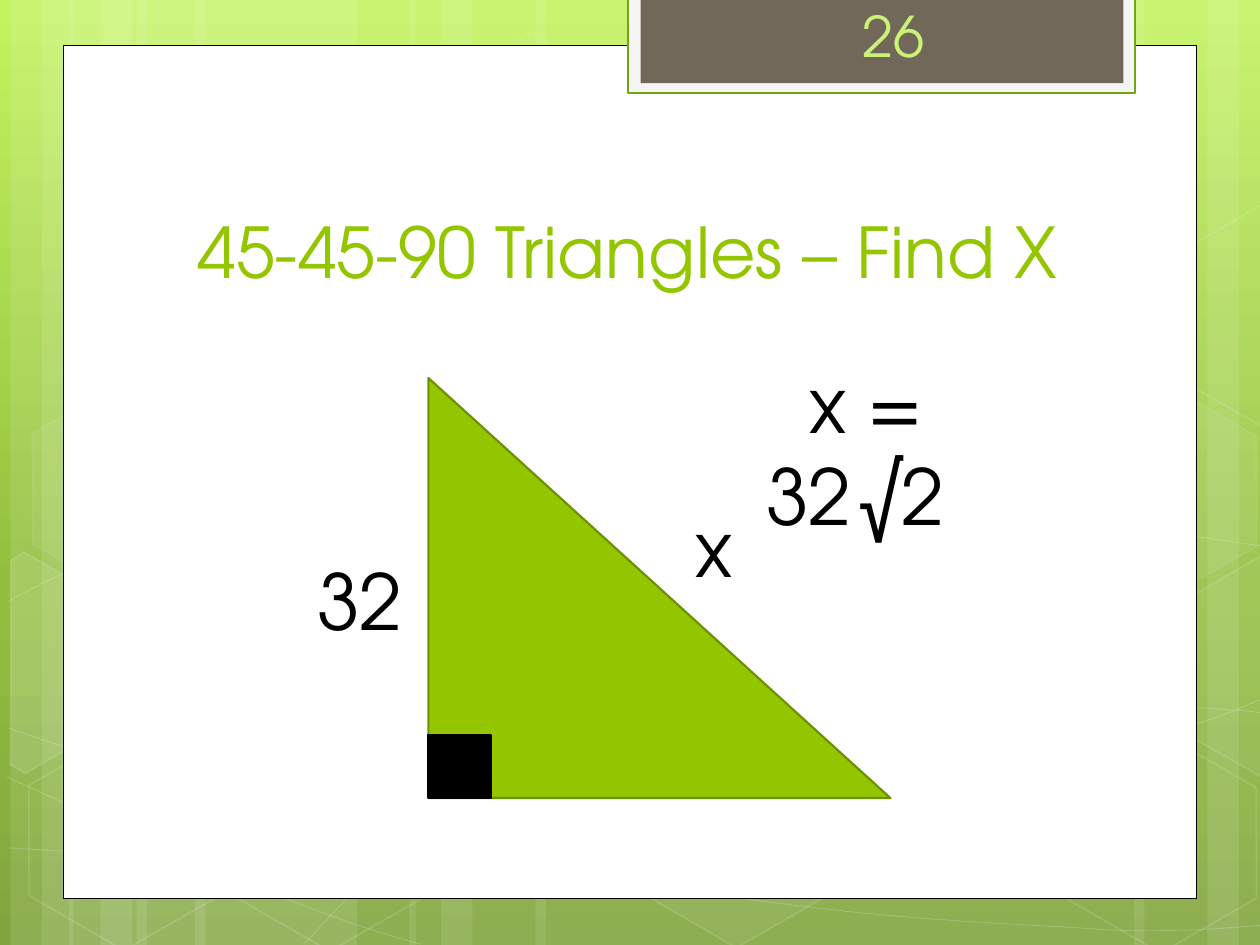
from copy import deepcopy
from dataclasses import dataclass
from math import cos, radians, sin

from lxml import etree
from pptx import Presentation
from pptx.dml.color import RGBColor
from pptx.enum.shapes import MSO_SHAPE
from pptx.enum.text import MSO_ANCHOR, MSO_AUTO_SIZE, PP_ALIGN
from pptx.oxml.ns import qn
from pptx.util import Pt

RECTANGLE, HEXAGON, TRIANGLE = MSO_SHAPE.RECTANGLE, MSO_SHAPE.HEXAGON, MSO_SHAPE.RIGHT_TRIANGLE
TOP, BOTTOM = MSO_ANCHOR.TOP, MSO_ANCHOR.BOTTOM
LEFT, CENTER = PP_ALIGN.LEFT, PP_ALIGN.CENTER
GROW, FIXED = MSO_AUTO_SIZE.SHAPE_TO_FIT_TEXT, MSO_AUTO_SIZE.NONE


@dataclass(frozen=True)
class Theme:
    """Colours, font and type sizes of the slide."""
    font: str = "TeX Gyre Adventor"
    white: str = "FFFFFF"
    black: str = "000000"
    green: str = "94C600"
    edge: str = "6D9200"
    tab: str = "F5F5F5"
    tab_edge: str = "74A510"
    tab_core: str = "71685A"
    number: str = "CAF278"
    gradient: tuple = ((0, "C3F35F"), (0.62, "93BF3F"), (1, "81A53E"))
    title_size: int = 40
    label_size: int = 44
    number_size: int = 32


THEME = Theme()
TILT = 30
HEXAGON_SIZE = (126, 109.5)
STRIPES = ((78, 126), (6, 36), (24, 60), (111.5, 126), (39.5, 36), (57.5, 60),
           (528, 126), (690, 36), (648, 60), (306, 222), (234, 36), (252, 60))
HEXAGONS = ((240.5, 26, 4, 8), (358, 424, 6, 12), (8, 425.5, 0, 12), (10, 224.5, 7, 8),
            (125.5, 426, 0, 12), (542, 326, 10, 12), (600.5, 427, 0, 12), (600.5, 226, 7, 8))
LEFT_CUT = ((6, 320.5), (13.5, 315.5), (69, 347), (68.5, 410.5), (14.5, 442), (6, 437))
RIGHT_CUT = ((666.5, 349), (720.5, 317.5), (726.5, 321), (726.5, 441.5), (721.5, 444), (666.5, 412.5))
UPPER_CUT = tuple((x, y - 200.5) for x, y in RIGHT_CUT)
CUT_HEXAGONS = ((LEFT_CUT, (25.9, 385.2), 10), (RIGHT_CUT, (709.2, 374.4), 4),
                (UPPER_CUT, (709.2, 173.9), 0))
CURVES = (
    ((5, 484.5), (44, 487), (83, 489), (137, 488), (191, 487.5), (258, 486), (330, 479),
     (402, 472), (504, 458), (570, 444), (636, 430.5), (703.5, 409.5), (725, 397)),
    ((5, 343.5), (26, 332), (47, 321), (87, 310.5), (128, 299.5), (186.5, 283.5), (250, 278.5),
     (314, 273.5), (392, 273), (471, 278.5), (550, 284.5), (682, 307), (725, 312.5)),
    ((4, 444), (91.5, 484), (178, 523.5), (240.5, 539.5)),
    ((5, 416), (27.5, 424), (50.5, 432), (92, 443.5), (134, 454.5), (196.5, 472.5), (257, 484.5),
     (317, 497), (392.5, 510), (452, 517), (512, 525), (576, 528), (614, 530),
     (651.5, 533), (661.5, 531.5), (680.5, 531.5), (699, 530.5), (712, 529.5), (725, 528.5)),
    ((174, 539.5), (187, 525), (200, 510.5), (217.5, 497.5), (234.5, 484.5), (259, 470),
     (279.5, 460), (299.5, 450), (312, 445.5), (338.5, 438.5), (364.5, 431.5), (412.5, 421),
     (438, 416), (463.5, 411), (467.5, 411), (489.5, 409.5), (512, 407.5), (547, 405.5),
     (571.5, 404.5), (597, 404), (638, 404.5), (638, 404.5), (654, 404.5), (670, 404.5),
     (686, 404.5), (699, 405.5), (711.5, 406), (718, 407), (722.5, 407.5), (722, 407), (724.5, 407.5)),
)


def apply(target, values):
    """Set each attribute of target from a dict."""
    for name, value in values.items():
        setattr(target, name, value)


def color_fill(fill, holder, color, opacity):
    """Fill with a colour at an opacity in percent, or with nothing."""
    if not color or not opacity:
        fill.background()
        return
    fill.solid()
    fill.fore_color.rgb = RGBColor.from_string(color)
    if opacity < 100:
        tone = holder.find(qn("a:solidFill")).find(qn("a:srgbClr"))
        etree.SubElement(tone, qn("a:alpha"), val=str(opacity * 1000))


def paint(shape, color=None, opacity=100, edge=None, width=1, edge_opacity=100):
    """Give a shape its fill and outline, without a shadow."""
    shape.shadow.inherit = False
    holder = shape.element.spPr
    color_fill(shape.fill, holder, color, opacity)
    shape.line.width = Pt(width)
    color_fill(shape.line.fill, holder.find(qn("a:ln")), edge, edge_opacity)


def add_preset(page, kind, box, **look):
    """Add a painted preset shape in a box given in points."""
    shape = page.shapes.add_shape(kind, *map(Pt, box))
    paint(shape, **look)
    return shape


def add_outline(page, origin, points, closed, **look):
    """Add a painted freeform through points relative to origin."""
    spots = [(Pt(origin[0] + x), Pt(origin[1] + y)) for x, y in points]
    builder = page.shapes.build_freeform(*spots[0])
    builder.add_line_segments(spots[1:], close=closed)
    shape = builder.convert_to_shape()
    paint(shape, **look)
    return shape


def bend(shape):
    """Turn each three straight segments of a freeform into one cubic curve."""
    segments = list(shape.element.iter(qn("a:lnTo")))
    for start in range(0, len(segments), 3):
        curve = etree.Element(qn("a:cubicBezTo"))
        segments[start].addprevious(curve)
        for segment in segments[start:start + 3]:
            curve.append(segment[0])
            segment.getparent().remove(segment)


def turn_back(points, center):
    """Turn points about a center against the tilt."""
    c, s = cos(radians(TILT)), sin(radians(TILT))
    offsets = [(x - center[0], y - center[1]) for x, y in points]
    return [(center[0] + x * c + y * s, center[1] - x * s + y * c) for x, y in offsets]


def add_text(page, box, words, size, color, indent=0, align=LEFT, anchor=TOP, auto_size=GROW):
    """Add one paragraph of text in a box given in points."""
    frame = page.shapes.add_textbox(*map(Pt, box)).text_frame
    apply(frame, {"word_wrap": True, "auto_size": auto_size, "vertical_anchor": anchor})
    para = frame.paragraphs[0]
    para.alignment = align
    if indent:
        para._p.get_or_add_pPr().set("indent", str(Pt(indent)))
    span = para.add_run()
    span.text = words
    apply(span.font, {"name": THEME.font, "size": Pt(size)})
    span.font.color.rgb = RGBColor.from_string(color)


def fill_background(page):
    """Give the page its vertical gradient of three stops."""
    fill = page.background.fill
    fill.gradient()
    fill.gradient_angle = 270
    stops = page.element.find(".//" + qn("a:gsLst"))
    stops.append(deepcopy(stops[-1]))
    for stop, (position, color) in zip(fill.gradient_stops, THEME.gradient):
        stop.position = position
        stop.color.rgb = RGBColor.from_string(color)


def draw_backdrop(page, box):
    """Draw translucent stripes, curves and hexagons over the box."""
    left, top, _, height = box
    for x, width in STRIPES:
        add_preset(page, RECTANGLE, (left + x, top, width, height), color=THEME.white, opacity=10)
    for controls in CURVES:
        bend(add_outline(page, (left, top), controls, False,
                         edge=THEME.white, width=0.5, edge_opacity=20))
    for x, y, opacity, edge_opacity in HEXAGONS:
        shape = add_preset(page, HEXAGON, (left + x, top + y, *HEXAGON_SIZE), color=THEME.white,
                           opacity=opacity, edge=THEME.white, edge_opacity=edge_opacity)
        shape.rotation = TILT
        shape.adjustments[0], shape.adjustments[1] = 0.29, 1.15
    for points, center, opacity in CUT_HEXAGONS:
        shape = add_outline(page, (left, top), turn_back(points, center), True, color=THEME.white,
                            opacity=opacity, edge=THEME.white, edge_opacity=12)
        shape.rotation = TILT


def draw_number_tab(page, box):
    """Draw the framed tab with the slide number."""
    left, top, width, height = box
    add_preset(page, RECTANGLE, box, color=THEME.tab, edge=THEME.tab_edge, width=1.25)
    add_preset(page, RECTANGLE, (left + 7, top, width - 13.7, height - 5.7), color=THEME.tab_core)
    add_text(page, (left + 127, top - 1.2, 87, 46), "26", THEME.number_size, THEME.number)


def draw_triangle(page, box):
    """Draw the right triangle with its corner mark, side labels and answer."""
    left, top, width, height = box
    mark = 36
    add_preset(page, TRIANGLE, box, color=THEME.green, edge=THEME.edge, width=1.25)
    add_preset(page, RECTANGLE, (left, top + height - mark, mark, mark),
               color=THEME.black, edge=THEME.black, width=1.25)
    labels = ((-95.3, 97, 114, "32"), (121, 66.7, 72, "x"), (186, -16, 210, "x = 32√2"))
    for x, y, label_width, words in labels:
        add_text(page, (left + x, top + y, label_width, 60.5), words,
                 THEME.label_size, THEME.black, indent=24.6)


def main():
    """Build the slide and save it."""
    deck = Presentation()
    apply(deck, {"slide_width": Pt(720), "slide_height": Pt(540)})
    page = deck.slides.add_slide(deck.slide_layouts[6])
    fill_background(page)
    draw_backdrop(page, (0, 0, 720, 540))
    add_preset(page, RECTANGLE, (36, 26, 648, 487.2), color=THEME.white, edge=THEME.black, width=0.5)
    draw_number_tab(page, (359, -1.5, 289.7, 54.7))
    add_text(page, (82, 80.6, 553, 90), "45-45-90 Triangles – Find X", THEME.title_size,
             THEME.green, align=CENTER, anchor=BOTTOM, auto_size=FIXED)
    draw_triangle(page, (244.8, 216, 264, 240))
    deck.save("out.pptx")


if __name__ == "__main__":
    main()
